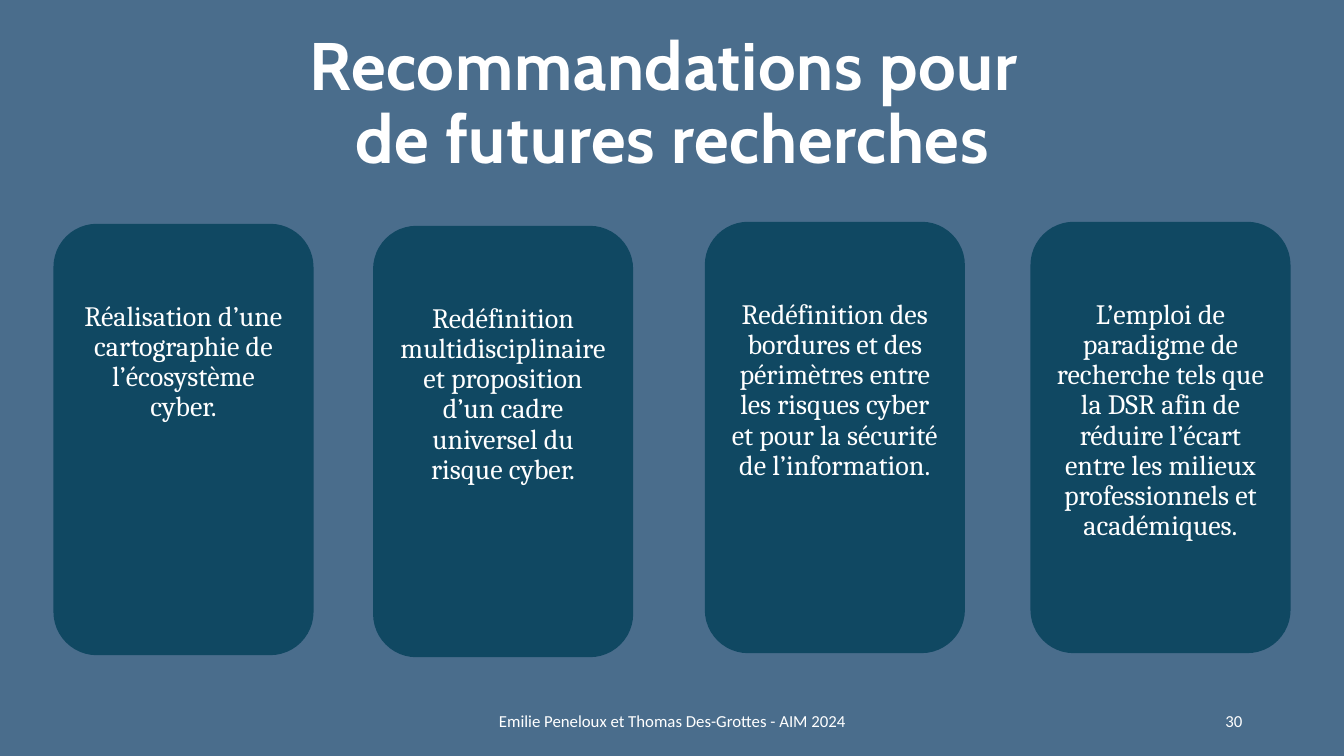
import pptx
import pptx.util
import pptx.dml.color
import pptx.enum.shapes
import pptx.enum.text
from dataclasses import dataclass

Inches = pptx.util.Inches
ALIGN = pptx.enum.text.PP_ALIGN
MIDDLE = pptx.enum.text.MSO_ANCHOR.MIDDLE
TOP = pptx.enum.text.MSO_ANCHOR.TOP


def color(code):
    return pptx.dml.color.RGBColor.from_string(code)


@dataclass(frozen=True)
class Theme:
    back: str = "4A6D8C"
    card: str = "104862"
    text: str = "FFFFFF"
    title: tuple = ("Cabin", 48, True)
    body: tuple = ("Cambria", 20, False)
    foot: tuple = ("Calibri", 12, False)


THEME = Theme()

CARDS = [
    (0.53, 2.22, "Réalisation d’une cartographie de l’écosystème cyber."),
    (3.7, 2.24, "Redéfinition multidisciplinaire et proposition d’un cadre "
                "universel du risque cyber."),
    (6.99, 2.2, "Redéfinition des bordures et des périmètres entre les risques "
                "cyber et pour la sécurité de l’information."),
    (10.22, 2.2, "L’emploi de paradigme de recherche tels que la DSR afin de "
                 "réduire l’écart entre les milieux professionnels et académiques."),
]


def write(shape, text, style, align, anchor=MIDDLE, lead=1.0):
    """Fill a shape with one paragraph in the given theme style."""
    frame = shape.text_frame
    para = frame.paragraphs[0]
    para.text = text
    name, size, bold = style
    font = {"name": name, "size": pptx.util.Pt(size), "bold": bold}
    jobs = [
        (frame, {"word_wrap": True, "vertical_anchor": anchor,
                 "auto_size": pptx.enum.text.MSO_AUTO_SIZE.NONE}),
        (para, {"alignment": align, "line_spacing": lead}),
    ]
    jobs += [(run.font, font) for run in para.runs]
    for part, values in jobs:
        for key, value in values.items():
            setattr(part, key, value)
    for run in para.runs:
        run.font.color.rgb = color(THEME.text)


def add_title(slide, box):
    title = slide.shapes.title
    for key, value in zip(("left", "top", "width", "height"), box):
        setattr(title, key, Inches(value))
    write(title, "Recommandations pour \vde futures recherches",
          THEME.title, ALIGN.CENTER, lead=0.9)
    for run in title.text_frame.paragraphs[0].runs:
        run.font._element.set("spc", "50")


def add_card(slide, box, text):
    card = slide.shapes.add_shape(
        pptx.enum.shapes.MSO_SHAPE.ROUNDED_RECTANGLE, *map(Inches, box))
    card.shadow.inherit = False
    card.fill.solid()
    card.fill.fore_color.rgb = color(THEME.card)
    card.line.fill.background()
    card.text_frame.margin_top = Inches(0.65)
    write(card, text, THEME.body, ALIGN.CENTER, TOP, 0.9)


def add_cards(slide, size):
    for left, top, text in CARDS:
        add_card(slide, (left, top, *size), text)


def add_foot(slide, box):
    left, top, width, height = box
    parts = [
        (3.5, 4.5, "Emilie Peneloux et Thomas Des-Grottes - AIM 2024", ALIGN.CENTER),
        (width - 3, 3, "30", ALIGN.RIGHT),
    ]
    for shift, wide, text, align in parts:
        area = slide.shapes.add_textbox(
            *map(Inches, (left + shift, top, wide, height)))
        write(area, text, THEME.foot, align)


def main():
    deck = pptx.Presentation()
    deck.slide_width, deck.slide_height = Inches(13.33), Inches(7.5)
    slide = deck.slides.add_slide(deck.slide_layouts[5])
    slide.background.fill.solid()
    slide.background.fill.fore_color.rgb = color(THEME.back)
    add_title(slide, (0.92, 0.32, 11.5, 1.45))
    add_cards(slide, (2.58, 4.28))
    add_foot(slide, (0.92, 6.95, 11.5, 0.4))
    deck.save("out.pptx")


if __name__ == "__main__":
    main()
